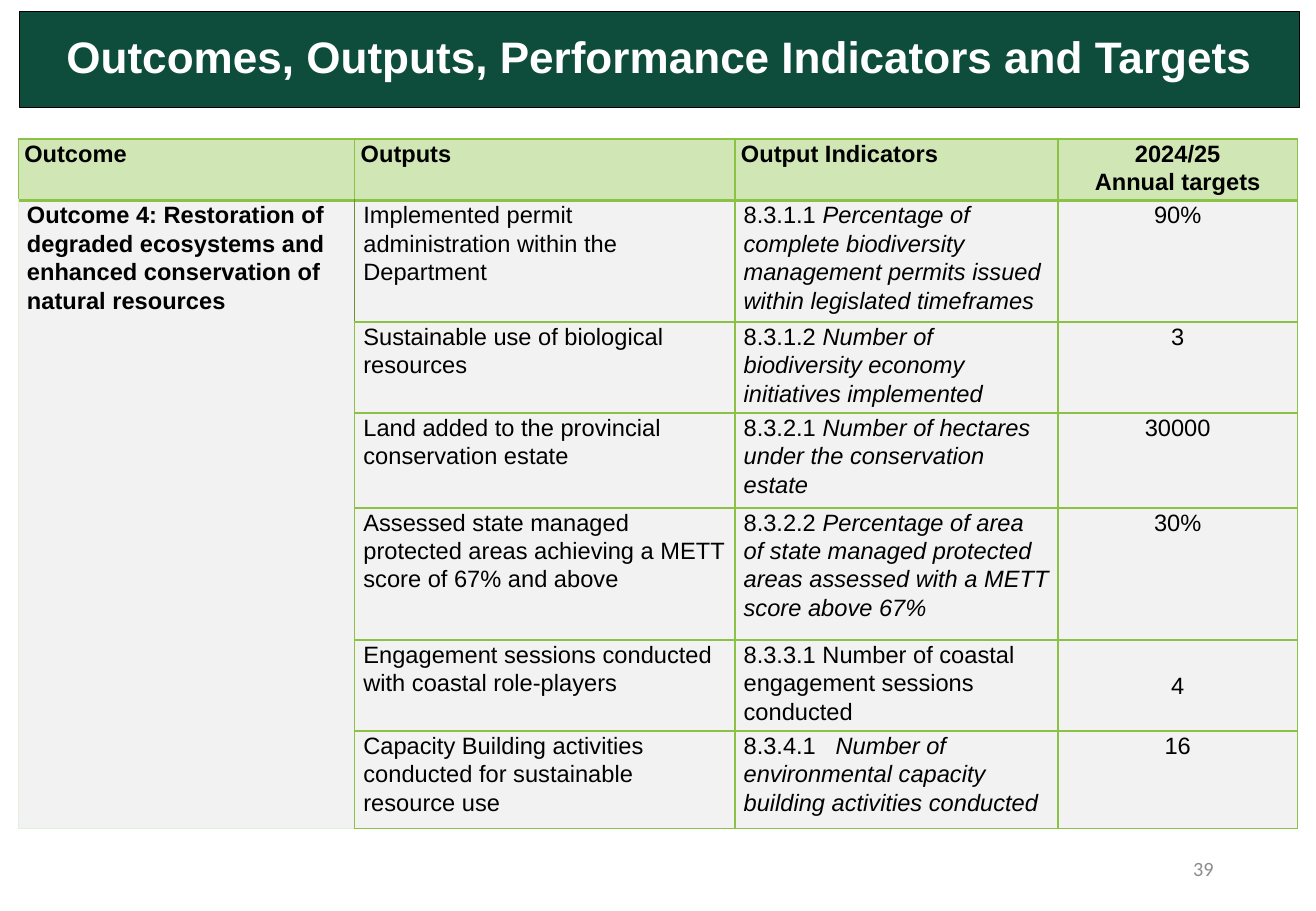
import pptx
import pptx.dml.color
import pptx.enum.shapes
import pptx.enum.text
import pptx.oxml
import pptx.oxml.ns
import pptx.util

Pt = pptx.util.Pt
ALIGN = pptx.enum.text.PP_ALIGN
ANCHOR = pptx.enum.text.MSO_ANCHOR
GREEN, DARK_GREEN, PALE_GREEN = "8BC145", "699331", "E2EFD9"
HEADER_FILL, BODY_FILL, BLACK = "D1E6B5", "F2F2F2", "000000"

COLUMN_WIDTHS = [199.4, 225.4, 191.5, 142]
ROW_HEIGHTS = [36.5, 71.4, 53.3, 56.2, 78.4, 52.6, 57.6]
HEADINGS = ["Outcome", "Outputs", "Output Indicators", "2024/25\nAnnual targets"]
OUTCOME = ("Outcome 4: Restoration of degraded ecosystems and enhanced "
           "conservation of natural resources")
OUTPUT_ROWS = [
    ("Implemented permit administration within the Department",
     ("8.3.1.1 ", "Percentage of complete biodiversity management permits issued "
      "within legislated timeframes"), "90%"),
    ("Sustainable use of biological resources",
     ("8.3.1.2 ", "Number of biodiversity economy initiatives implemented"), "3"),
    ("Land added to the provincial conservation estate",
     ("8.3.2.1 ", "Number of hectares under the conservation estate"), "30000"),
    ("Assessed state managed protected areas achieving a METT score of 67% and above",
     ("8.3.2.2 ", "Percentage of area of state managed protected areas assessed "
      "with a METT score above 67%"), "30%"),
    ("Engagement sessions conducted with coastal role-players",
     ("8.3.3.1 Number of coastal engagement sessions conducted", ""), "4"),
    ("Capacity Building activities conducted for sustainable resource use",
     ("8.3.4.1\t", "Number of environmental capacity building activities conducted"), "16"),
]


def colour(hex_text):
    """Turn a hex string into a colour."""
    return pptx.dml.color.RGBColor.from_string(hex_text)


def format_span(span, size, hex_text, font="Arial", bold=False, italic=False):
    """Set the font of one run."""
    span.font.name, span.font.size = font, Pt(size)
    span.font.bold, span.font.italic = bold, italic
    span.font.color.rgb = colour(hex_text)


def set_borders(cell, left=GREEN, right=GREEN, top=GREEN, bottom=GREEN, bottom_width=1):
    """Draw the four borders of a table cell."""
    sides = [("L", left, 1), ("R", right, 1), ("T", top, 1), ("B", bottom, bottom_width)]
    properties = cell._tc.get_or_add_tcPr()
    for index, (side, hex_text, width) in enumerate(sides):
        properties.insert(index, pptx.oxml.parse_xml(
            f'<a:ln{side} {pptx.oxml.ns.nsdecls("a")} w="{Pt(width)}">'
            f'<a:solidFill><a:srgbClr val="{hex_text}"/></a:solidFill></a:ln{side}>'))


def add_tab_stop(para, position):
    """Give a paragraph one left tab stop."""
    para._p.get_or_add_pPr().append(pptx.oxml.parse_xml(
        f'<a:tabLst {pptx.oxml.ns.nsdecls("a")}>'
        f'<a:tab pos="{Pt(position)}" algn="l"/></a:tabLst>'))


def fill_cell(cell, text, fill, inset, bold=False, align=ALIGN.LEFT, italic_text=""):
    """Write and format the contents of one table cell."""
    cell.fill.solid()
    cell.fill.fore_color.rgb = colour(fill)
    cell.margin_left = cell.margin_right = Pt(inset)
    cell.margin_top = cell.margin_bottom = 0
    cell.text_frame.text = text
    for para in cell.text_frame.paragraphs:
        para.alignment, para.line_spacing = align, 1.07
        if "\t" in text:
            add_tab_stop(para, 54.5)
        for span in para.runs:
            format_span(span, 14, BLACK, bold=bold)
    para.space_after = Pt(8)
    if italic_text:
        span = para.add_run()
        span.text = italic_text
        format_span(span, 14, BLACK, italic=True)


def add_title(page, left, top, width, height):
    """Add the title banner."""
    box = page.shapes.add_shape(pptx.enum.shapes.MSO_SHAPE.RECTANGLE,
                                Pt(left), Pt(top), Pt(width), Pt(height))
    box.shadow.inherit = False
    box.fill.solid()
    box.fill.fore_color.rgb = colour("0E4D3C")
    box.line.color.rgb, box.line.width = colour(BLACK), Pt(0.75)
    box.text_frame.word_wrap = True
    box.text_frame.vertical_anchor = ANCHOR.MIDDLE
    para = box.text_frame.paragraphs[0]
    para.text = "Outcomes, Outputs, Performance Indicators and Targets"
    para.alignment, para.line_spacing = ALIGN.CENTER, 0.9
    format_span(para.runs[0], 26.1, "FFFFFF", bold=True)


def add_targets_table(page, left, top):
    """Add the table of outputs, indicators and targets."""
    table = page.shapes.add_table(
        len(ROW_HEIGHTS), len(COLUMN_WIDTHS), Pt(left), Pt(top),
        Pt(sum(COLUMN_WIDTHS)), Pt(sum(ROW_HEIGHTS))).table
    table.horz_banding = False
    for column, width in zip(table.columns, COLUMN_WIDTHS):
        column.width = Pt(width)
    for row, height in zip(table.rows, ROW_HEIGHTS):
        row.height = Pt(height)

    for index, heading in enumerate(HEADINGS):
        align = ALIGN.CENTER if index == 3 else ALIGN.LEFT
        fill_cell(table.cell(0, index), heading, HEADER_FILL, 3.6, True, align)
        set_borders(table.cell(0, index), bottom_width=2)

    for index, (output, (number, indicator), target) in enumerate(OUTPUT_ROWS, 1):
        edge = DARK_GREEN if index == 1 else GREEN
        outcome_cell, output_cell, indicator_cell, target_cell = table.rows[index].cells
        fill_cell(outcome_cell, OUTCOME if index == 1 else "", BODY_FILL, 5.2, True)
        fill_cell(output_cell, output, BODY_FILL, 5.2)
        fill_cell(indicator_cell, number, BODY_FILL, 5.2, italic_text=indicator)
        fill_cell(target_cell, target, BODY_FILL, 5.2, align=ALIGN.CENTER)
        if not indicator:
            target_cell.vertical_anchor = ANCHOR.MIDDLE
        set_borders(outcome_cell, PALE_GREEN, edge, bottom=PALE_GREEN)
        set_borders(output_cell, left=edge)
        set_borders(indicator_cell)
        set_borders(target_cell)
    table.cell(1, 0).merge(table.cell(len(OUTPUT_ROWS), 0))


def add_page_number(page, left, top, width, height):
    """Add the page number."""
    box = page.shapes.add_textbox(Pt(left), Pt(top), Pt(width), Pt(height))
    box.text_frame.word_wrap = True
    box.text_frame.vertical_anchor = ANCHOR.MIDDLE
    para = box.text_frame.paragraphs[0]
    para.text = "39"
    para.alignment = ALIGN.RIGHT
    format_span(para.runs[0], 12, "8C8C8C", font="Calibri")


def main():
    """Build the deck and save it."""
    deck = pptx.Presentation()
    deck.slide_width, deck.slide_height = Pt(780), Pt(540)
    page = deck.slides.add_slide(deck.slide_layouts[6])
    add_title(page, 11.5, 6.7, 758.7, 56.9)
    add_page_number(page, 550.8, 500.4, 175.7, 28.8)
    add_targets_table(page, 10.8, 82.5)
    deck.save("out.pptx")


if __name__ == "__main__":
    main()
